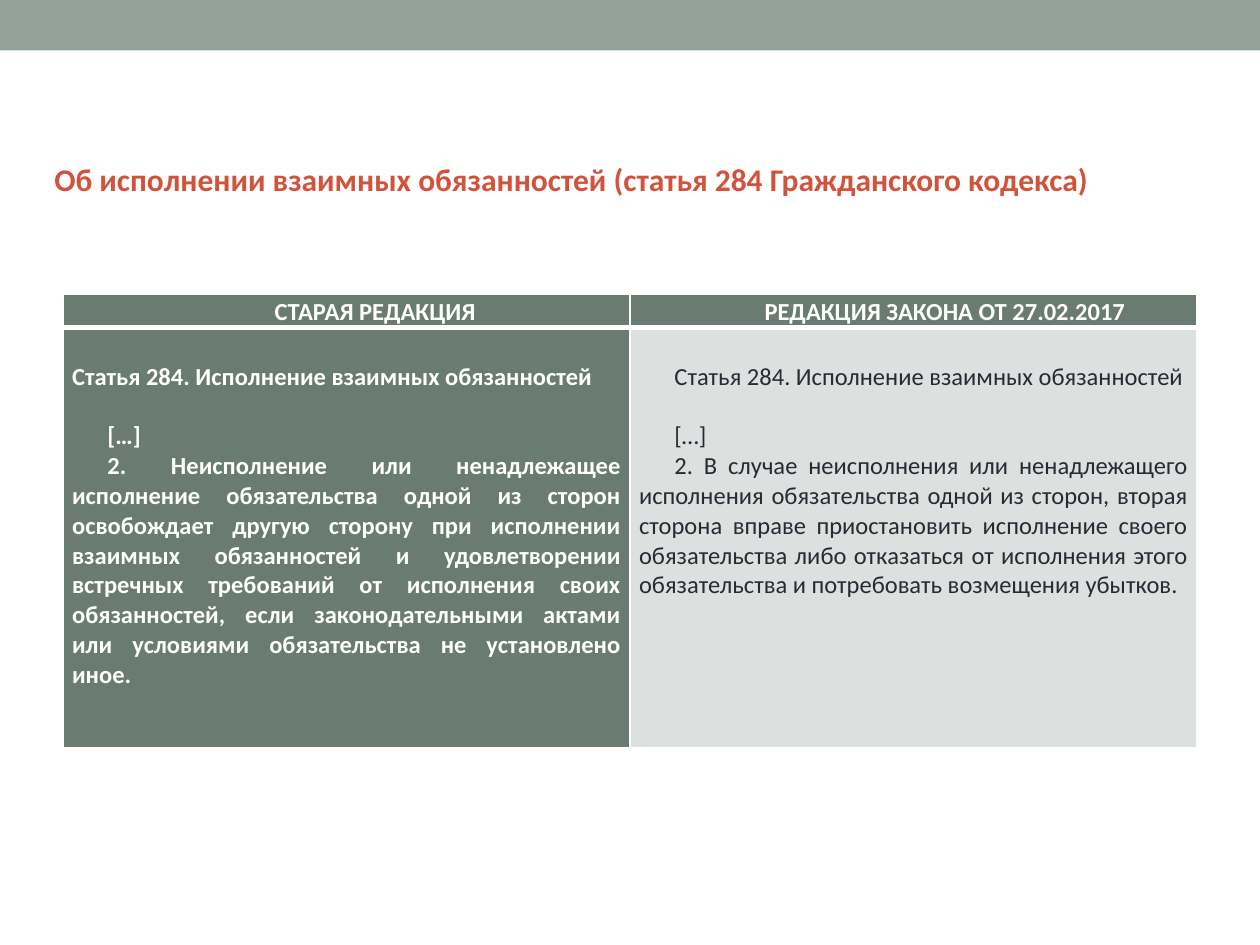
"""Build a slide comparing two versions of Article 284 of the Civil Code."""
from lxml import etree
from pptx import Presentation
from pptx.dml.color import RGBColor
from pptx.enum import shapes, text
from pptx.oxml import ns
from pptx.util import Pt

SAGE = RGBColor(0x93, 0xA2, 0x99)
GREEN = RGBColor(0x6A, 0x7C, 0x71)
PALE = RGBColor(0xDC, 0xE0, 0xDE)
RED = RGBColor(0xD2, 0x53, 0x3C)
INK = RGBColor(0x29, 0x29, 0x34)
WHITE = RGBColor(0xFF, 0xFF, 0xFF)

HEADINGS = ["СТАРАЯ РЕДАКЦИЯ ", "РЕДАКЦИЯ ЗАКОНА ОТ 27.02.2017"]
ARTICLE = "Статья 284. Исполнение взаимных обязанностей"
OLD_RULE = (
    "2. Неисполнение или ненадлежащее исполнение обязательства одной из сторон "
    "освобождает другую сторону при исполнении взаимных обязанностей и "
    "удовлетворении встречных требований от исполнения своих обязанностей, "
    "если\u00a0законодательными актами или условиями обязательства не установлено иное."
).replace("\u00a0", " ")
NEW_RULE = (
    "2. В случае неисполнения или ненадлежащего исполнения обязательства одной из "
    "сторон, вторая сторона вправе приостановить исполнение своего обязательства "
    "либо отказаться от исполнения этого обязательства и потребовать возмещения убытков."
)


def write(paragraph, wording, size=14, color=WHITE, bold=True, font="Calibri",
          align=text.PP_ALIGN.JUSTIFY, left=0, first=0, before=0):
    """Put formatted wording into a paragraph."""
    paragraph.alignment = align
    paragraph.line_spacing = 1.0
    paragraph.space_before = Pt(before)
    properties = paragraph._p.get_or_add_pPr()
    properties.set("marL", str(Pt(left)))
    properties.set("indent", str(Pt(first)))
    run = paragraph.add_run()
    run.text = wording
    run.font.size, run.font.bold, run.font.name = Pt(size), bold, font
    run.font.color.rgb = color


class SlideBuilder:
    """Hold the style and the current slide."""

    side_margin = 5.2
    rule_width = 1
    heading_rule = 3

    def __init__(self, deck):
        """Add a title-only slide to the deck."""
        self.slide = deck.slides.add_slide(deck.slide_layouts[5])

    def band(self, left, top, width, height, color):
        """Draw a plain filled rectangle."""
        band = self.slide.shapes.add_shape(
            shapes.MSO_SHAPE.RECTANGLE, Pt(left), Pt(top), Pt(width), Pt(height))
        band.shadow.inherit = False
        band.fill.solid()
        band.fill.fore_color.rgb = color
        band.line.fill.background()

    def title(self, wording, left, top, width, height):
        """Place and format the title."""
        title = self.slide.shapes.title
        title.left, title.top = Pt(left), Pt(top)
        title.width, title.height = Pt(width), Pt(height)
        title.fill.solid()
        title.fill.fore_color.rgb = WHITE
        title.text_frame.word_wrap = True
        title.text_frame.vertical_anchor = text.MSO_ANCHOR.MIDDLE
        write(title.text_frame.paragraphs[0], wording, size=18, color=RED,
              align=text.PP_ALIGN.LEFT)

    def table(self, left, top, widths, heights):
        """Add an empty table with the given column widths and row heights."""
        table = self.slide.shapes.add_table(
            len(heights), len(widths), Pt(left), Pt(top),
            Pt(sum(widths)), Pt(sum(heights))).table
        for column, width in zip(table.columns, widths):
            column.width = Pt(width)
        for row, height in zip(table.rows, heights):
            row.height = Pt(height)
        return table

    def cell(self, cell, fill, paragraphs, top_margin, heading=False):
        """Fill a cell with paragraphs given as wording and format."""
        cell.margin_left = cell.margin_right = Pt(self.side_margin)
        cell.margin_top, cell.margin_bottom = Pt(top_margin), 0
        cell.fill.solid()
        cell.fill.fore_color.rgb = fill
        self.borders(cell, "lnB" if heading else "lnT")
        frame = cell.text_frame
        for index, (wording, style) in enumerate(paragraphs):
            paragraph = frame.add_paragraph() if index else frame.paragraphs[0]
            write(paragraph, wording, **style)

    def borders(self, cell, thick_side):
        """Give a cell white borders, thicker beside the heading rule."""
        properties = cell._tc.get_or_add_tcPr()
        for index, side in enumerate(("lnL", "lnR", "lnT", "lnB")):
            width = self.heading_rule if side == thick_side else self.rule_width
            line = etree.Element(ns.qn(f"a:{side}"), w=str(Pt(width)))
            fill = etree.SubElement(line, ns.qn("a:solidFill"))
            etree.SubElement(fill, ns.qn("a:srgbClr"), val=str(WHITE))
            properties.insert(index, line)


def main():
    """Build and save the slide."""
    deck = Presentation()
    deck.slide_width, deck.slide_height = Pt(720), Pt(540)
    builder = SlideBuilder(deck)
    builder.band(0, 0, 720, 28.8, SAGE)
    builder.title("Об исполнении взаимных обязанностей (статья 284 Гражданского кодекса)",
                  23.8, 88, 686, 29)

    comparison = builder.table(36, 168, [324, 324], [19.2, 240.2])
    for column, heading in enumerate(HEADINGS):
        style = dict(align=text.PP_ALIGN.CENTER, left=36)
        builder.cell(comparison.cell(0, column), GREEN, [(heading, style)], 2, heading=True)

    indent = 20.2
    versions = [
        (OLD_RULE, GREEN, dict(color=WHITE, bold=True), 0),
        (NEW_RULE, PALE, dict(color=INK, bold=False), indent),
    ]
    for column, (rule, fill, look, article_indent) in enumerate(versions):
        paragraphs = [
            (ARTICLE, dict(look, first=article_indent)),
            ("[…]", dict(look, first=indent, before=17)),
            (rule, dict(look, first=indent)),
        ]
        builder.cell(comparison.cell(1, column), fill, paragraphs, 19.7)
    deck.save("out.pptx")


if __name__ == "__main__":
    main()
